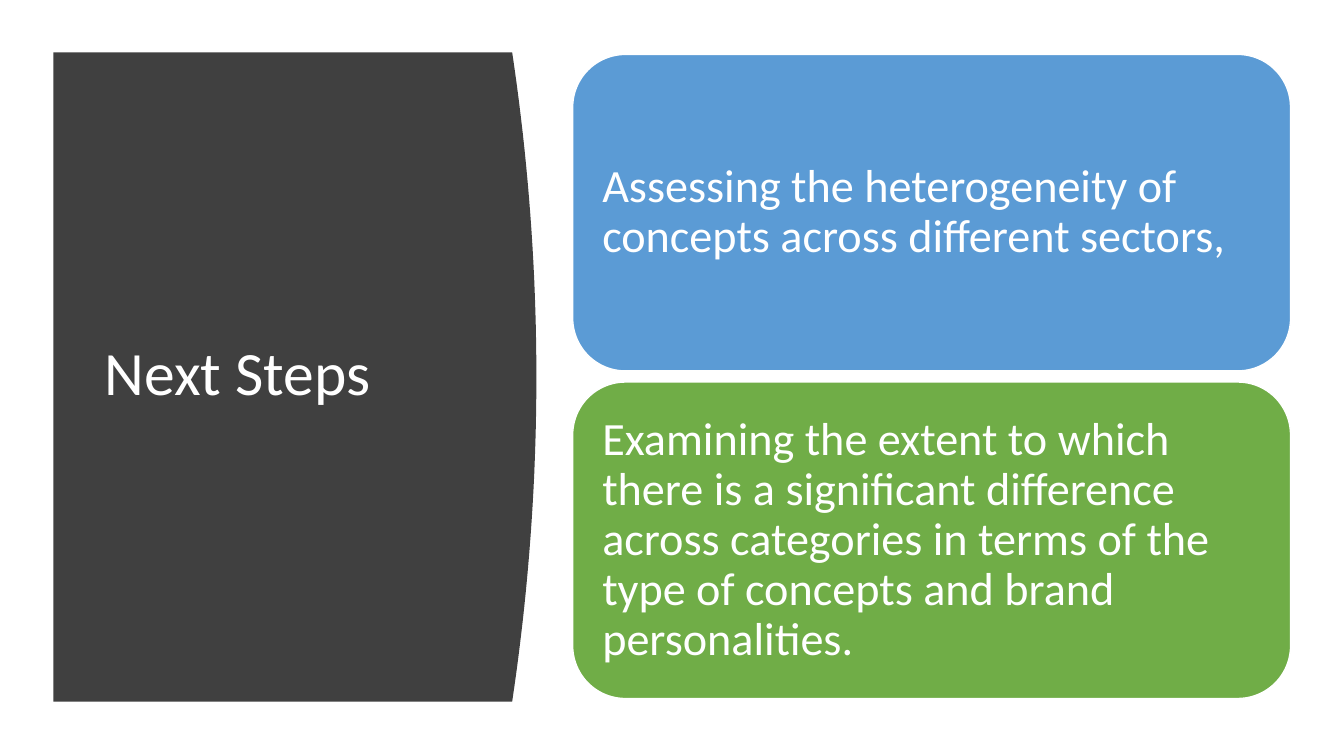
"""Build the "Next Steps" slide: a curved title panel beside two rounded step cards."""
from pptx import Presentation
from pptx.dml.color import RGBColor
from pptx.enum.shapes import MSO_SHAPE as Shape
from pptx.enum.text import MSO_ANCHOR as Anchor, PP_ALIGN as Align
from pptx.util import Inches, Pt

COLORS = {
    "panel": "404040",
    "blue": "5B9BD5",
    "green": "70AD47",
    "white": "FFFFFF",
}

STEPS = [
    ("blue", "Assessing the heterogeneity of concepts across different sectors,"),
    ("green", "Examining the extent to which there is a significant difference across "
              "categories in terms of the type of concepts and brand personalities."),
]


class StepsSlide:
    font = "Calibri"
    title_size = 44
    step_size = 33

    def __init__(self, deck):
        self.slide = deck.slides.add_slide(deck.slide_layouts[6])

    def color(self, name):
        return RGBColor.from_string(COLORS[name])

    def paint(self, shape, fill):
        shape.shadow.inherit = False
        shape.fill.solid()
        shape.fill.fore_color.rgb = self.color(fill)

    def set_text(self, shape, text, size):
        frame = shape.text_frame
        frame.text = text
        frame.word_wrap = True
        frame.vertical_anchor = Anchor.MIDDLE
        paragraph = frame.paragraphs[0]
        paragraph.alignment = Align.LEFT
        paragraph.line_spacing = 0.9
        font = paragraph.runs[0].font
        font.name = self.font
        font.size = Pt(size)
        font.color.rgb = self.color("white")

    def curved_panel(self, left, top, corner, height, bulge, segments=40):
        edge = []
        for step in range(segments + 1):
            t = step / segments
            edge.append((Inches(corner + bulge * 4 * t * (1 - t)),
                         Inches(top + height * t)))
        outline = self.slide.shapes.build_freeform(Inches(left), Inches(top))
        outline.add_line_segments(edge + [(Inches(left), Inches(top + height))])
        panel = outline.convert_to_shape()
        self.paint(panel, "panel")
        panel.line.fill.background()

    def title(self, text, left, top, width, height):
        heading = self.slide.shapes.add_textbox(
            Inches(left), Inches(top), Inches(width), Inches(height))
        self.set_text(heading, text, self.title_size)

    def card(self, text, fill, left, top, width, height):
        card = self.slide.shapes.add_shape(
            Shape.ROUNDED_RECTANGLE,
            Inches(left), Inches(top), Inches(width), Inches(height))
        self.paint(card, fill)
        card.line.color.rgb = self.color("white")
        card.line.width = Pt(1)
        self.set_text(card, text, self.step_size)
        frame = card.text_frame
        frame.margin_left = frame.margin_right = Inches(0.14)
        frame.margin_top = frame.margin_bottom = Inches(0.14)


def main():
    deck = Presentation()
    deck.slide_width = Inches(13.33)
    deck.slide_height = Inches(7.5)

    page = StepsSlide(deck)
    page.curved_panel(left=0.53, top=0.52, corner=5.08, height=6.44, bulge=0.24)
    page.title("Next Steps", 0.94, 1.11, 3.74, 5.24)

    first_top, card_height, gap = 0.54, 3.14, 0.11
    for index, (fill, text) in enumerate(STEPS):
        top = first_top + index * (card_height + gap)
        page.card(text, fill, 5.68, top, 7.12, card_height)

    deck.save("out.pptx")


if __name__ == "__main__":
    main()
